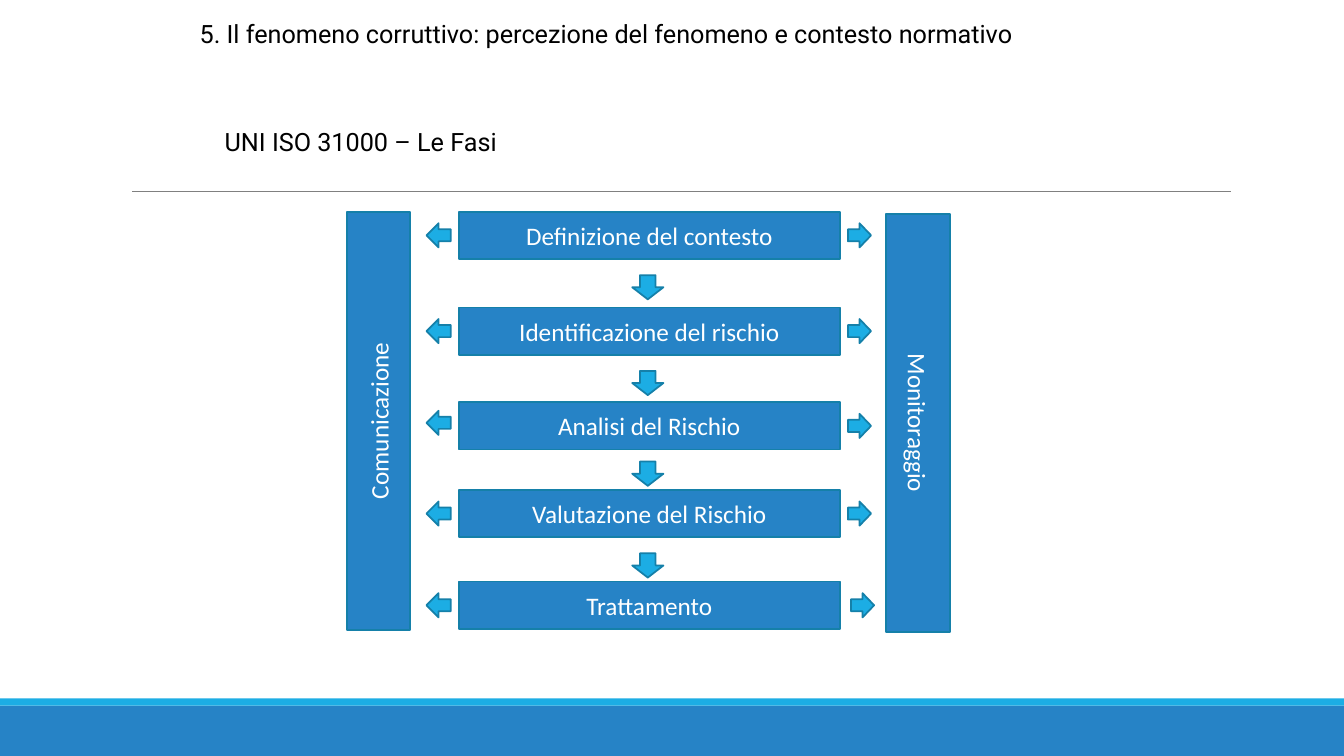
from dataclasses import dataclass
from typing import Optional

from lxml.etree import SubElement
from pptx import Presentation
from pptx.dml.color import RGBColor
from pptx.enum.shapes import MSO_CONNECTOR as Connector, MSO_SHAPE as Preset
from pptx.enum.text import MSO_ANCHOR as Anchor, MSO_AUTO_SIZE as AutoSize, PP_ALIGN as Align
from pptx.oxml.ns import qn
from pptx.shapes.autoshape import Shape
from pptx.slide import Slide
from pptx.text.text import TextFrame
from pptx.util import Inches, Pt


@dataclass(frozen=True)
class Theme:
    blue: RGBColor = RGBColor(0x26, 0x83, 0xC6)
    cyan: RGBColor = RGBColor(0x1C, 0xAD, 0xE4)
    outline: RGBColor = RGBColor(0x15, 0x80, 0xA9)
    rule: RGBColor = RGBColor(0x80, 0x80, 0x80)
    white: RGBColor = RGBColor(0xFF, 0xFF, 0xFF)
    black: RGBColor = RGBColor(0, 0, 0)
    heading_font: str = "Roboto"
    box_font: str = "Calibri"
    text_size: Pt = Pt(18)
    outline_width: Pt = Pt(1.25)
    rule_width: Pt = Pt(0.5)


@dataclass(frozen=True)
class Box:
    left: float
    top: float
    width: float
    height: float

    def lengths(self) -> tuple[Inches, Inches, Inches, Inches]:
        return Inches(self.left), Inches(self.top), Inches(self.width), Inches(self.height)


@dataclass(frozen=True)
class Phase:
    label: str
    top: float
    next_arrow_top: Optional[float] = None
    left_arrow_shift: float = 0
    right_arrow_left: float = 8.41


@dataclass(frozen=True)
class Pillar:
    label: str
    box: Box
    direction: str


THEME = Theme()
PHASE_LEFT, PHASE_WIDTH, PHASE_HEIGHT = 4.55, 3.78, 0.47
ARROW = 0.24
PHASES = (
    Phase("Definizione del contesto", 2.1, 2.73),
    Phase("Identificazione del rischio", 3.05, 3.68),
    Phase("Analisi del Rischio", 3.99, 4.58, left_arrow_shift=-0.03),
    Phase("Valutazione del Rischio", 4.86, 5.49),
    Phase("Trattamento", 5.77, right_arrow_left=8.44),
)
PILLARS = (
    Pillar("Comunicazione", Box(3.44, 2.1, 0.63, 4.15), "vert270"),
    Pillar("Monitoraggio", Box(8.79, 2.12, 0.63, 4.15), "vert"),
)


def write(frame: TextFrame, text: str, font: str, color: RGBColor, align: Align) -> None:
    paragraph = frame.paragraphs[0]
    paragraph.alignment = align
    run = paragraph.add_run()
    run.text = text
    run.font.name = font
    run.font.size = THEME.text_size
    run.font.color.rgb = color


def add_filled(slide: Slide, preset: Preset, box: Box, fill: RGBColor, outlined: bool = True) -> Shape:
    shape = slide.shapes.add_shape(preset, *box.lengths())
    shape.shadow.inherit = False
    shape.fill.solid()
    shape.fill.fore_color.rgb = fill
    if outlined:
        shape.line.color.rgb = THEME.outline
        shape.line.width = THEME.outline_width
    else:
        shape.line.fill.background()
    return shape


def add_labelled(slide: Slide, label: str, box: Box, direction: str = "horz") -> None:
    frame = add_filled(slide, Preset.RECTANGLE, box, THEME.blue).text_frame
    frame.vertical_anchor = Anchor.MIDDLE
    frame._txBody.bodyPr.set("vert", direction)
    write(frame, label, THEME.box_font, THEME.white, Align.CENTER)


def add_frame(slide: Slide) -> None:
    add_filled(slide, Preset.RECTANGLE, Box(0, 7, 13.33, 0.5), THEME.blue, outlined=False)
    add_filled(slide, Preset.RECTANGLE, Box(0, 6.93, 13.33, 0.07), THEME.cyan, outlined=False)
    rule = slide.shapes.add_connector(
        Connector.STRAIGHT, Inches(1.31), Inches(1.9), Inches(12.21), Inches(1.9)
    )
    rule.line.color.rgb = THEME.rule
    rule.line.width = THEME.rule_width
    SubElement(rule._element.spPr, qn("a:effectLst"))


def add_headings(slide: Slide) -> None:
    title = slide.shapes.title
    title.left, title.top, title.width, title.height = Box(1.88, 0.13, 9.61, 0.4).lengths()
    subtitle = slide.shapes.add_textbox(*Box(2.13, 1.2, 3.02, 0.4).lengths())
    headings = (
        (title, "5. Il fenomeno corruttivo: percezione del fenomeno e contesto normativo", True),
        (subtitle, "UNI ISO 31000 – Le Fasi", False),
    )
    for heading, text, wrap in headings:
        frame = heading.text_frame
        frame.word_wrap = wrap
        frame.auto_size = AutoSize.SHAPE_TO_FIT_TEXT
        frame.vertical_anchor = Anchor.TOP
        write(frame, text, THEME.heading_font, THEME.black, Align.LEFT)


def add_phase(slide: Slide, phase: Phase) -> None:
    add_labelled(slide, phase.label, Box(PHASE_LEFT, phase.top, PHASE_WIDTH, PHASE_HEIGHT))
    arrow_top = phase.top + (PHASE_HEIGHT - ARROW) / 2
    left_box = Box(4.23, arrow_top + phase.left_arrow_shift, ARROW, ARROW)
    add_filled(slide, Preset.LEFT_ARROW, left_box, THEME.cyan)
    right_box = Box(phase.right_arrow_left, arrow_top, 0.23, ARROW)
    add_filled(slide, Preset.RIGHT_ARROW, right_box, THEME.cyan)
    if phase.next_arrow_top is not None:
        down_box = Box(6.27, phase.next_arrow_top, 0.31, ARROW)
        add_filled(slide, Preset.DOWN_ARROW, down_box, THEME.cyan)


def main() -> None:
    deck = Presentation()
    deck.slide_width, deck.slide_height = Inches(13.33), Inches(7.5)
    slide = deck.slides.add_slide(deck.slide_layouts.get_by_name("Title Only"))
    add_frame(slide)
    add_headings(slide)
    for phase in PHASES:
        add_phase(slide, phase)
    for pillar in PILLARS:
        add_labelled(slide, pillar.label, pillar.box, pillar.direction)
    deck.save("out.pptx")


if __name__ == "__main__":
    main()
